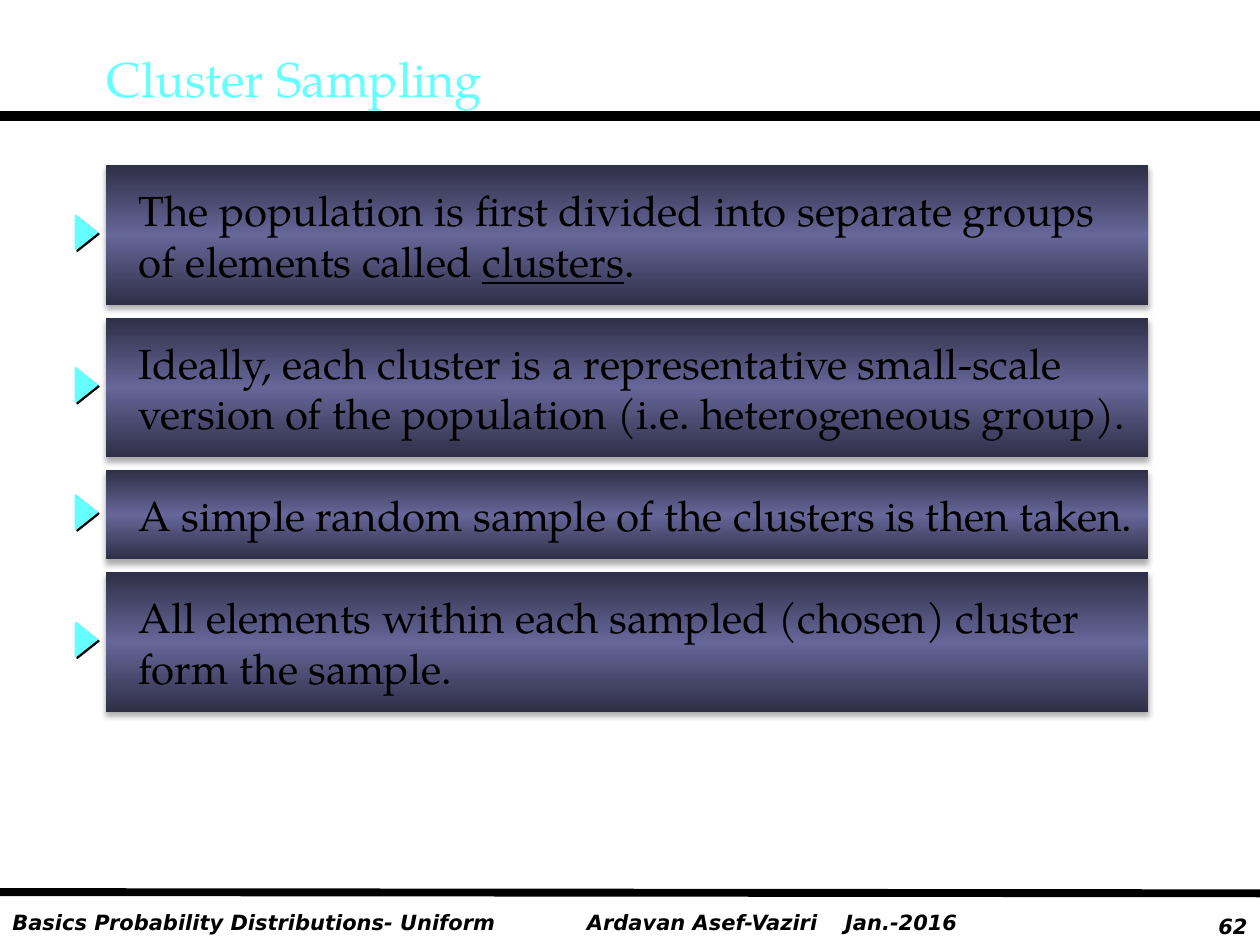
import copy

from lxml import etree
from pptx import Presentation
from pptx import util as u
from pptx.dml.color import RGBColor
from pptx.enum import shapes, text
from pptx.oxml.ns import qn

COLORS = {"black": "000000", "cyan": "66FFFF", "edge": "2F2F47", "middle": "666699"}
RGB = {name: RGBColor.from_string(value) for name, value in COLORS.items()}
SERIF = {"name": "TeX Gyre Pagella", "size": u.Pt(24)}
TITLE = {"name": "TeX Gyre Pagella", "size": u.Pt(28)}
FOOTER = {"name": "DejaVu Sans", "size": u.Pt(12), "bold": True, "italic": True}


def add_run(p, words, fmt, color="black"):
    r = p.add_run()
    r.text = words
    for key, value in fmt.items():
        setattr(r.font, key, value)
    r.font.color.rgb = RGB[color]


def set_shadow(sp, opacity=0, blur=0, dist=0, angle=0):
    """Give the shape a black outer shadow, or none when opacity is 0."""
    effects = etree.SubElement(sp._element.spPr, qn("a:effectLst"))
    if opacity:
        shadow = etree.SubElement(
            effects, qn("a:outerShdw"), blurRad=str(u.Pt(blur)), dist=str(u.Pt(dist)),
            dir=str(angle * 60000), algn="ctr", rotWithShape="0")
        color = etree.SubElement(shadow, qn("a:srgbClr"), val=COLORS["black"])
        etree.SubElement(color, qn("a:alpha"), val=str(opacity * 1000))


prs = Presentation()
prs.slide_width, prs.slide_height = u.Inches(10), u.Inches(7.5)
s = prs.slides.add_slide(prs.slide_layouts[6])

# Rules above and below the content
for y1, y2, width in [(0.92, 0.92, 6), (7.08, 7.09, 4.5)]:
    rule = s.shapes.add_connector(
        shapes.MSO_CONNECTOR.STRAIGHT, 0, u.Inches(y1), u.Inches(10), u.Inches(y2))
    rule.line.color.rgb = RGB["black"]
    rule.line.width = u.Pt(width)
    set_shadow(rule)

# Footer and title
left, right = text.PP_ALIGN.LEFT, text.PP_ALIGN.RIGHT
top, middle = text.MSO_ANCHOR.TOP, text.MSO_ANCHOR.MIDDLE
labels = [
    ("Basics Probability Distributions- Uniform", 0, 7.17, 4.56, 0.3, left, top, FOOTER, "black"),
    ("Ardavan Asef-Vaziri", 4.56, 7.17, 2.05, 0.3, left, top, FOOTER, "black"),
    ("Jan.-2016", 6.61, 7.17, 1.3, 0.3, left, top, FOOTER, "black"),
    ("62", 9.25, 7.2, 0.75, 0.3, right, top, FOOTER, "black"),
    ("Cluster Sampling", 0.75, 0.2, 8.5, 0.83, left, middle, TITLE, "cyan"),
]
for words, x, y, w, h, align, anchor, fmt, color in labels:
    tf = s.shapes.add_textbox(*map(u.Inches, (x, y, w, h))).text_frame
    tf.word_wrap = True
    tf.vertical_anchor = anchor
    tf.paragraphs[0].alignment = align
    add_run(tf.paragraphs[0], words, fmt, color)

# Statement bars: each is a list of lines, each line a list of (words, underlined)
statements = [
    [[("The population is first divided into separate groups", False)],
     [("of elements called ", False), ("clusters", True), (".", False)]],
    [[("Ideally, each cluster is a representative small-scale", False)],
     [("version of the population (i.e. heterogeneous group).", False)]],
    [[("A simple random sample of the clusters is then taken.", False)]],
    [[("All elements within each sampled (chosen) cluster", False)],
     [("form the sample.", False)]],
]
BAR_X, BAR_W, GAP = 0.84, 8.27, 0.1
MARK_W, MARK_H = 0.27, 0.17
y = 1.31
for lines in statements:
    h = 0.31 + 0.4 * len(lines)
    bar = s.shapes.add_shape(
        shapes.MSO_SHAPE.RECTANGLE, *map(u.Inches, (BAR_X, y, BAR_W, h)))
    bar.line.fill.background()
    bar.fill.gradient()
    bar.fill.gradient_angle = 90
    edge, centre = bar.fill.gradient_stops
    edge.color.rgb, edge.position = RGB["edge"], 0
    centre.color.rgb, centre.position = RGB["middle"], 0.5
    stops = bar._element.spPr.find(qn("a:gradFill")).find(qn("a:gsLst"))
    stops.append(copy.deepcopy(stops[0]))
    stops[-1].set("pos", "100000")
    set_shadow(bar, opacity=32, blur=3.5, dist=2.2, angle=90)

    tf = bar.text_frame
    tf.word_wrap = True
    tf.vertical_anchor = middle
    tf.margin_left, tf.margin_right = u.Inches(0.26), 0
    for i, line in enumerate(lines):
        p = tf.add_paragraph() if i else tf.paragraphs[0]
        p.alignment = left
        for words, underlined in line:
            add_run(p, words, {**SERIF, "underline": underlined})

    mark = s.shapes.add_shape(
        shapes.MSO_SHAPE.ISOSCELES_TRIANGLE,
        *map(u.Inches, (0.55, y + h / 2 - 0.02 - MARK_H / 2, MARK_W, MARK_H)))
    mark.rotation = 90
    mark.fill.solid()
    mark.fill.fore_color.rgb = mark.line.color.rgb = RGB["cyan"]
    mark.line.width = u.Pt(1)
    set_shadow(mark, opacity=100, dist=1.4, angle=45)
    y += h + GAP

prs.save("out.pptx")
